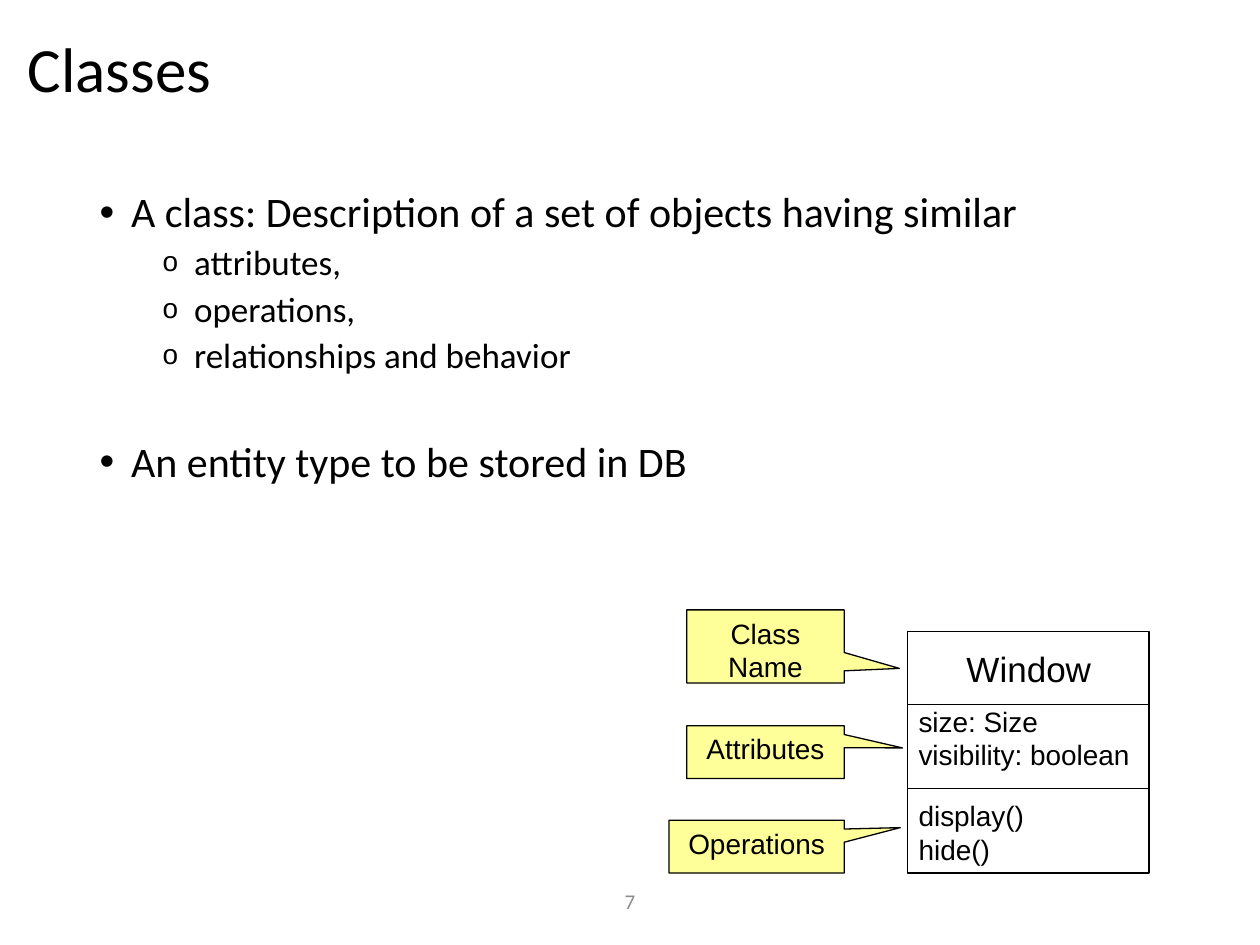
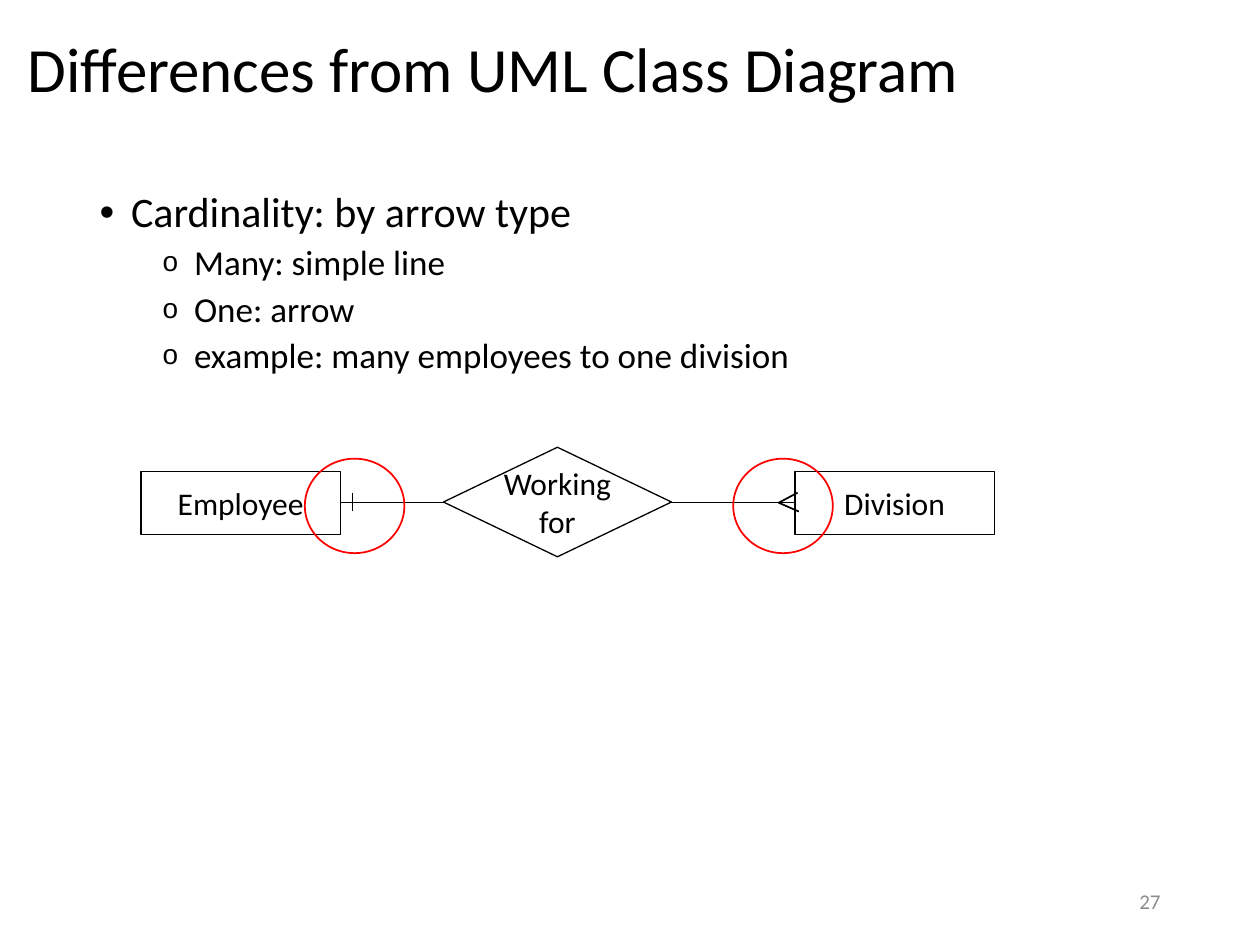
"""Build two slides on classes and on how ER diagrams differ from UML."""
from dataclasses import dataclass

from lxml.etree import SubElement
from pptx import Presentation
from pptx.dml.color import RGBColor
from pptx.enum.shapes import MSO_CONNECTOR, MSO_SHAPE
from pptx.enum.text import MSO_ANCHOR, MSO_AUTO_SIZE, PP_ALIGN
from pptx.oxml.ns import qn
from pptx.util import Pt

BLACK, WHITE, GREY = "000000", "FFFFFF", "8C8C8C"
YELLOW, RED = "FFFF99", "FF0000"
SANS, BODY = "Arial", "Calibri"
LEFT, CENTER, RIGHT = PP_ALIGN.LEFT, PP_ALIGN.CENTER, PP_ALIGN.RIGHT
TOP, MIDDLE = MSO_ANCHOR.TOP, MSO_ANCHOR.MIDDLE


@dataclass(frozen=True)
class Box:
    left: float
    top: float
    width: float
    height: float

    def lengths(self) -> tuple:
        return tuple(Pt(v) for v in (self.left, self.top, self.width, self.height))


@dataclass(frozen=True)
class Level:
    size: float
    before: float
    margin: float
    bullet: str
    percent: int


@dataclass(frozen=True)
class Item:
    text: str
    level: int = 0
    extra: float = 0


@dataclass(frozen=True)
class Callout:
    text: str
    box: Box
    tip: tuple


@dataclass(frozen=True)
class Part:
    text: str
    top: float
    height: float
    size: float = 16
    align: PP_ALIGN = LEFT
    inset: tuple = (0, 0)


TITLE_BOX = Box(8.6, 5.8, 702.7, 71.3)
LIST_BOX = Box(49.7, 105.8, 620.6, 380.9)
LEVELS = (Level(24, 10, 18, "•", 100), Level(20, 5, 54, "o", 80))


def color(code: str) -> RGBColor:
    return RGBColor.from_string(code)


def write(frame, text: str, *, size: float = 18, font: str = BODY, ink: str = BLACK,
          align: PP_ALIGN = LEFT, anchor: MSO_ANCHOR = MIDDLE, wrap: bool = True,
          inset: tuple = (7.2, 3.6), spacing: float = 1) -> None:
    frame.text = text
    frame.auto_size = MSO_AUTO_SIZE.NONE
    frame.word_wrap = wrap
    frame.vertical_anchor = anchor
    frame.margin_left = frame.margin_right = Pt(inset[0])
    frame.margin_top = frame.margin_bottom = Pt(inset[1])
    for line in frame.paragraphs:
        line.alignment = align
        line.line_spacing = spacing
        for run in line.runs:
            run.font.size = Pt(size)
            run.font.name = font
            run.font.color.rgb = color(ink)


def place(shape, box: Box) -> None:
    shape.left, shape.top, shape.width, shape.height = box.lengths()


def style(shape, fill: str = "", line: str = BLACK, weight: float = 0.75) -> None:
    shape.shadow.inherit = False
    if fill:
        shape.fill.solid()
        shape.fill.fore_color.rgb = color(fill)
    else:
        shape.fill.background()
    shape.line.color.rgb = color(line)
    shape.line.width = Pt(weight)


def draw(slide, kind: MSO_SHAPE, box: Box, **look):
    shape = slide.shapes.add_shape(kind, *box.lengths())
    style(shape, **look)
    return shape


def join(slide, start: tuple, end: tuple, weight: float) -> None:
    line = slide.shapes.add_connector(MSO_CONNECTOR.STRAIGHT, *map(Pt, start + end))
    line.line.color.rgb = color(BLACK)
    line.line.width = Pt(weight)
    SubElement(line._element.spPr, qn("a:effectLst"))


def label(slide, text: str, box: Box, **form) -> None:
    write(slide.shapes.add_textbox(*box.lengths()).text_frame, text, **form)


def fill_list(frame, items: list[Item]) -> None:
    write(frame, "\n".join(item.text for item in items), anchor=TOP, spacing=0.9)
    for line, item in zip(frame.paragraphs, items):
        level = LEVELS[item.level]
        line.level = item.level
        line.space_before = Pt(level.before + item.extra)
        for run in line.runs:
            run.font.size = Pt(level.size)
        props = line._p.get_or_add_pPr()
        props.set("marL", str(Pt(level.margin)))
        props.set("indent", str(Pt(-18)))
        SubElement(props, qn("a:buSzPct"), val=str(level.percent * 1000))
        SubElement(props, qn("a:buFont"), typeface=SANS)
        SubElement(props, qn("a:buChar"), char=level.bullet)


def start_slide(deck, title: str, items: list[Item], page: str, spot: Box, align: PP_ALIGN):
    slide = deck.slides.add_slide(deck.slide_layouts[1])
    head, body = slide.placeholders
    place(head, TITLE_BOX)
    write(head.text_frame, title, size=36, spacing=0.9)
    place(body, LIST_BOX)
    fill_list(body.text_frame, items)
    label(slide, page, spot, size=12, ink=GREY, align=align)
    return slide


def build_classes(deck) -> None:
    slide = start_slide(deck, "Classes", [
        Item("A class: Description of a set of objects having similar"),
        Item("attributes,", 1),
        Item("operations,", 1),
        Item("relationships and behavior", 1),
        Item("An entity type to be stored in DB", extra=27),
    ], "7", Box(238.3, 500.4, 243.4, 28.8), CENTER)

    frame = Box(518.4, 360.7, 138.2, 138.2)
    draw(slide, MSO_SHAPE.RECTANGLE, frame)
    for y in (402.5, 450.7):
        join(slide, (frame.left, y), (frame.left + frame.width, y), 0.75)
    for part in (
        Part("Window", 366.5, 31, 20, CENTER, (7.2, 3.6)),
        Part("size: Size\vvisibility: boolean", 402.5, 38.2),
        Part("display()\vhide()", 456.5, 38.2),
    ):
        label(slide, part.text, Box(524.9, part.top, 126, part.height), size=part.size,
              font=SANS, align=part.align, inset=part.inset)
    for note in (
        Callout("Class Name", Box(392.4, 348.5, 90, 41.8), (0.85, 0.3)),
        Callout("Attributes", Box(392.4, 414.7, 90, 30.2), (0.87, -0.08)),
        Callout("Operations", Box(382.3, 468.7, 100.1, 30.2), (0.82, -0.36)),
    ):
        shape = draw(slide, MSO_SHAPE.RECTANGULAR_CALLOUT, note.box, fill=YELLOW)
        shape.adjustments[0], shape.adjustments[1] = note.tip
        write(shape.text_frame, note.text, size=16, font=SANS, align=CENTER, anchor=TOP)


def build_arrows(deck) -> None:
    slide = start_slide(deck, "Differences from UML Class Diagram", [
        Item("Cardinality: by arrow type"),
        Item("Many: simple line", 1),
        Item("One: arrow", 1),
        Item("example: many employees to one division", 1),
    ], "27", Box(508.3, 500.4, 162, 28.8), RIGHT)

    axis, near, far, width = 287.3, 80.6, 454.3, 113.8
    for name, left in (("Employee", near), ("Division", far)):
        shape = draw(slide, MSO_SHAPE.RECTANGLE, Box(left, axis - 18, width, 36))
        write(shape.text_frame, name, align=CENTER, wrap=False)
    join(slide, (near + width, axis), (far, axis), 0.5)
    link = draw(slide, MSO_SHAPE.DIAMOND, Box(253.4, 255.6, 130.3, 62.6), fill=WHITE)
    write(link.text_frame, "Working\nfor", align=CENTER, wrap=False)
    for left in (174.2, 419):
        draw(slide, MSO_SHAPE.OVAL, Box(left, 262.1, 56.9, 54), line=RED, weight=1)
    join(slide, (201.6, 281.5), (201.6, 292.3), 0.5)
    fork = slide.shapes.build_freeform(Pt(455.8), Pt(281.5))
    fork.add_line_segments([(Pt(445), Pt(axis)), (Pt(456.5), Pt(292.3))], close=False)
    style(fork.convert_to_shape(), weight=1)


def main() -> None:
    deck = Presentation()
    deck.slide_width, deck.slide_height = Pt(720), Pt(540)
    build_classes(deck)
    build_arrows(deck)
    deck.save("out.pptx")


if __name__ == "__main__":
    main()
